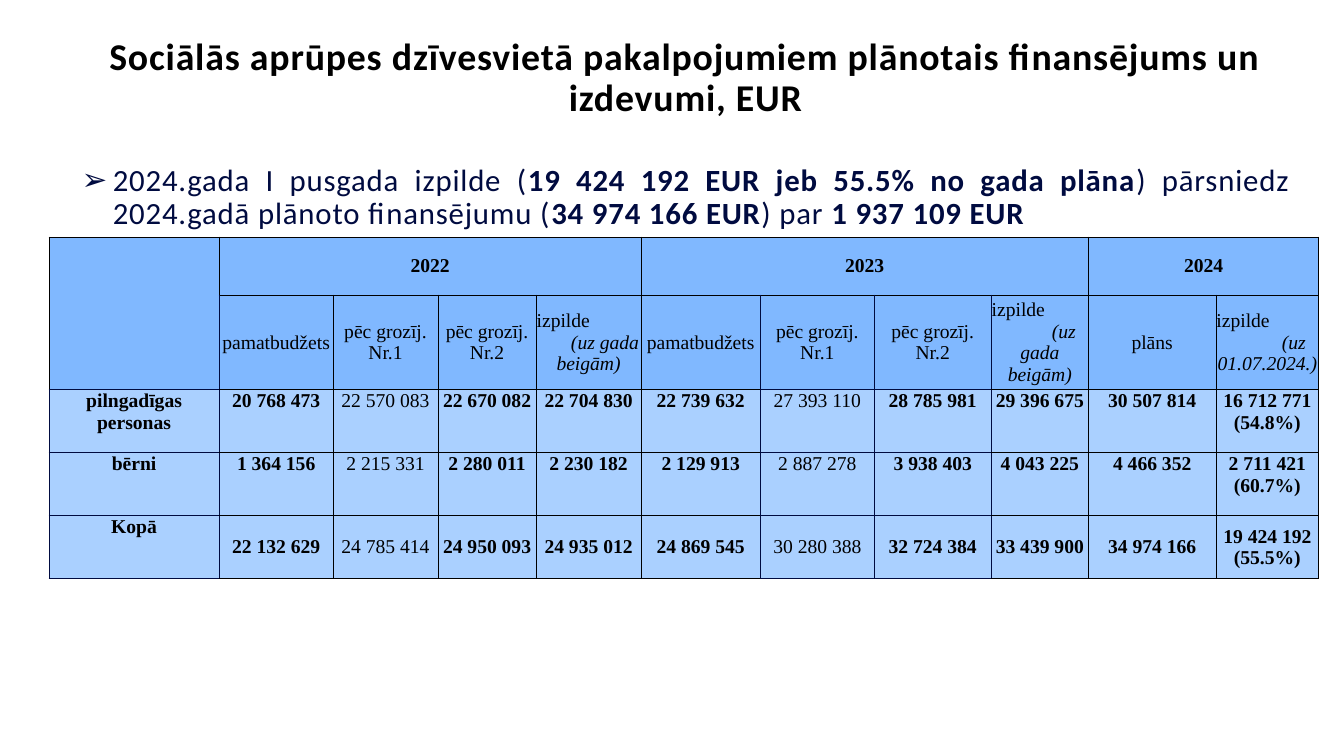
from lxml.etree import SubElement
from pptx import Presentation
from pptx.dml.color import RGBColor
from pptx.enum.text import MSO_ANCHOR as Anchor, PP_ALIGN as Align
from pptx.oxml.ns import qn
from pptx.util import Inches, Pt

THEME = {
    "navy": "000B40", "black": "000000", "header": "80B8FF", "body": "AAD0FF",
    "heading_font": "Calibri", "table_font": "Times New Roman",
    "title_size": 54, "bullet_size": 44, "table_size": 28,
}

# Content
TITLE = "Sociālās aprūpes dzīvesvietā pakalpojumiem plānotais finansējums un izdevumi, EUR"
SUMMARY = [  # (text, bold)
    ("2024.gada I pusgada izpilde (", False),
    ("19 424 192 EUR jeb 55.5% no gada plāna", True),
    (") pārsniedz 2024.gadā plānoto finansējumu (", False),
    ("34 974 166 EUR", True),
    (") par ", False),
    ("1 937 109 EUR", True),
]
YEARS = [("2022", 1, 4), ("2023", 5, 8), ("2024", 9, 10)]  # first and last column
BUDGET = ["pamatbudžets", "pēc grozīj. Nr.1", "pēc grozīj. Nr.2"]
# An execution heading is (word, note, indent of the note's first line)
HEADINGS = [
    *BUDGET, ("izpilde", "(uz gada beigām)", 0.65),
    *BUDGET, ("izpilde", "(uz gada beigām)", 0.95),
    "plāns", ("izpilde", "(uz 01.07.2024.)", 1.05),
]
ROWS = [
    ["pilngadīgas personas", "20 768 473", "22 570 083", "22 670 082", "22 704 830", "22 739 632",
     "27 393 110", "28 785 981", "29 396 675", "30 507 814", "16 712 771 (54.8%)"],
    ["bērni", "1 364 156", "2 215 331", "2 280 011", "2 230 182", "2 129 913",
     "2 887 278", "3 938 403", "4 043 225", "4 466 352", "2 711 421 (60.7%)"],
    ["Kopā", "22 132 629", "24 785 414", "24 950 093", "24 935 012", "24 869 545",
     "30 280 388", "32 724 384", "33 439 900", "34 974 166", "19 424 192 (55.5%)"],
]
PLAIN_COLUMNS = (2, 6)
WIDTHS = [3.38, 2.26, 2.08, 1.95, 2.08, 2.37, 2.26, 2.32, 1.93, 2.53, 2.04]
HEIGHTS = [1.15, 1.88, 1.25, 1.25, 1.25]

# Border styles: (colour, points)
NAVY, BLACK, THIN = (THEME["navy"], 1), (THEME["black"], 1), (THEME["black"], 0.5)
COLUMN_EDGES = [NAVY, NAVY, THIN, THIN, THIN, BLACK, NAVY, NAVY, NAVY, BLACK, THIN, BLACK]
NAVY_ROW_COLUMNS = (0, 6, 7)


def add_run(paragraph, text, font, size, color, bold=False, italic=False, spacing=None):
    run = paragraph.add_run()
    run.text = text
    run.font.name, run.font.size = font, Pt(size)
    run.font.bold, run.font.italic = bold, italic
    run.font.color.rgb = RGBColor.from_string(color)
    if spacing:
        run.font._element.set("spc", str(spacing))


def add_cell_text(paragraph, text, align=Align.CENTER, **style):
    paragraph.alignment = align
    add_run(paragraph, text, THEME["table_font"], THEME["table_size"], THEME["black"], **style)


def set_borders(cell, **edges):
    properties = cell._tc.get_or_add_tcPr()
    for side in "LRTB":
        color, points = edges[side]
        line = SubElement(properties, qn(f"a:ln{side}"), w=str(Pt(points)))
        SubElement(SubElement(line, qn("a:solidFill")), qn("a:srgbClr"), val=color)


def style_cell(cell, row, column):
    rule = NAVY if column in NAVY_ROW_COLUMNS else THIN
    if row == 0:
        set_borders(cell, L=BLACK, R=BLACK, T=BLACK, B=THIN if column else NAVY)
    else:
        set_borders(cell, L=COLUMN_EDGES[column], R=COLUMN_EDGES[column + 1],
                    T=THIN if row == 1 else rule, B=rule)
    cell.fill.solid()
    cell.fill.fore_color.rgb = RGBColor.from_string(THEME["header" if row < 2 else "body"])
    cell.margin_left = cell.margin_right = cell.margin_top = Inches(0.01)
    cell.margin_bottom = 0
    centred = row < 2 or (row == len(HEIGHTS) - 1 and column > 0)
    cell.vertical_anchor = Anchor.MIDDLE if centred else Anchor.TOP


def add_heading_text(slide):
    box = slide.shapes.add_textbox(Inches(1.52), Inches(0.71), Inches(24.17), Inches(0.7))
    frame = box.text_frame
    frame.word_wrap = True

    title = frame.paragraphs[0]
    title.alignment, title.line_spacing = Align.CENTER, 0.9
    add_run(title, TITLE, THEME["heading_font"], THEME["title_size"], THEME["black"],
            bold=True, spacing=120)

    summary = frame.add_paragraph()
    summary.alignment, summary.line_spacing = Align.JUSTIFY, 0.9
    summary.space_before = Pt(64)
    properties = summary._p.get_or_add_pPr()
    properties.set("marL", str(Inches(0.62)))
    properties.set("indent", str(Inches(-0.62)))
    SubElement(properties, qn("a:buFont"), typeface="Wingdings")
    SubElement(properties, qn("a:buChar"), char="➢")
    properties.find(qn("a:buFont")).set("typeface", "Arial")
    for text, bold in SUMMARY:
        add_run(summary, text, THEME["heading_font"], THEME["bullet_size"], THEME["navy"],
                bold=bold, spacing=120)


def add_budget_table(slide):
    table = slide.shapes.add_table(
        len(HEIGHTS), len(WIDTHS), Inches(0.97), Inches(4.7),
        Inches(sum(WIDTHS)), Inches(sum(HEIGHTS))).table
    for column, width in zip(table.columns, WIDTHS):
        column.width = Inches(width)
    for row, height in zip(table.rows, HEIGHTS):
        row.height = Inches(height)
    for row in range(len(HEIGHTS)):
        for column in range(len(WIDTHS)):
            style_cell(table.cell(row, column), row, column)

    # Year groups
    table.cell(0, 0).merge(table.cell(1, 0))
    for year, first, last in YEARS:
        table.cell(0, first).merge(table.cell(0, last))
        add_cell_text(table.cell(0, first).text_frame.paragraphs[0], year, bold=True)

    # Column headings
    for column, heading in enumerate(HEADINGS, 1):
        frame = table.cell(1, column).text_frame
        if isinstance(heading, str):
            add_cell_text(frame.paragraphs[0], heading)
            continue
        word, note, indent = heading
        add_cell_text(frame.paragraphs[0], word, Align.LEFT)
        paragraph = frame.add_paragraph()
        add_cell_text(paragraph, note, italic=True)
        paragraph._p.get_or_add_pPr().set("indent", str(Inches(indent)))

    # Amounts
    for row, values in enumerate(ROWS, 2):
        for column, value in enumerate(values):
            add_cell_text(table.cell(row, column).text_frame.paragraphs[0], value,
                          bold=column not in PLAIN_COLUMNS)


def main():
    presentation = Presentation()
    presentation.slide_width, presentation.slide_height = Inches(26.67), Inches(15)
    slide = presentation.slides.add_slide(presentation.slide_layouts[6])
    add_heading_text(slide)
    add_budget_table(slide)
    presentation.save("out.pptx")


if __name__ == "__main__":
    main()
